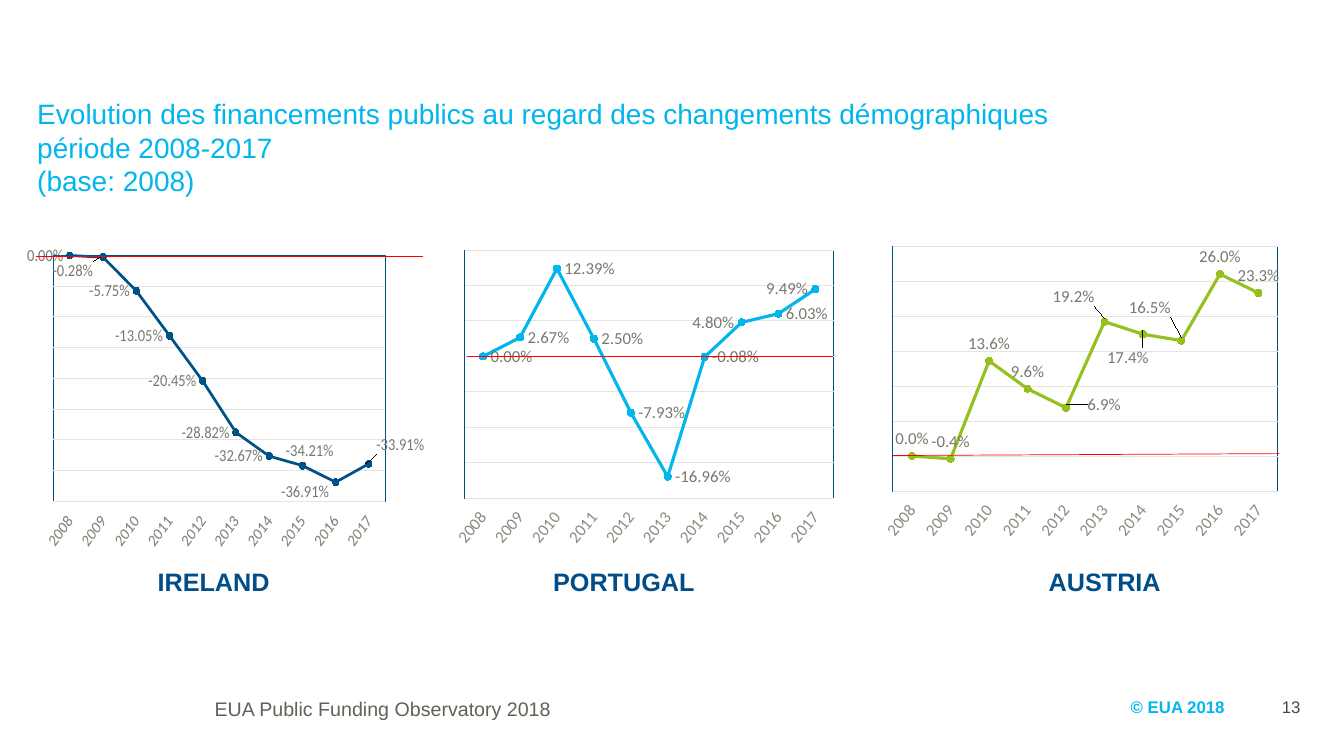
from dataclasses import dataclass

from lxml import etree
from pptx import Presentation
from pptx.chart.data import CategoryChartData
from pptx.dml.color import RGBColor
from pptx.enum.chart import XL_CHART_TYPE as ChartType
from pptx.enum.chart import XL_LABEL_POSITION as LabelPosition
from pptx.enum.chart import XL_MARKER_STYLE as MarkerStyle
from pptx.enum.chart import XL_TICK_LABEL_POSITION as TickLabelPosition
from pptx.enum.chart import XL_TICK_MARK as TickMark
from pptx.enum.shapes import MSO_CONNECTOR as Connector
from pptx.enum.text import MSO_ANCHOR as Anchor
from pptx.enum.text import PP_ALIGN as Align
from pptx.oxml import parse_xml
from pptx.oxml.ns import nsdecls, qn
from pptx.util import Pt


@dataclass(frozen=True)
class Theme:
    cyan: str = "00B6ED"
    navy: str = "005186"
    green: str = "95C11F"
    country: str = "004D88"
    red: str = "FF0000"
    grid: str = "E5E4E2"
    axis_text: str = "8C8B80"
    label_text: str = "7A786E"
    dark: str = "494842"
    footer: str = "645F57"
    text_font: str = "Arial"
    chart_font: str = "Calibri"
    title_size: int = 20
    country_size: int = 18
    footer_size: int = 14
    small_size: int = 12
    chart_size: int = 10


theme = Theme()


def set_font(font, size, color, name=theme.text_font, bold=False):
    font.name, font.size, font.bold = name, Pt(size), bold
    font.color.rgb = RGBColor.from_string(color)


def add_text(box, text, size, color, bold=False, align=Align.LEFT, anchor=Anchor.TOP):
    left, top, width, height = box
    frame = slide.shapes.add_textbox(Pt(left), Pt(top), Pt(width), Pt(height)).text_frame
    frame.word_wrap = True
    frame.vertical_anchor = anchor
    paragraph = frame.paragraphs[0]
    paragraph.text = text
    paragraph.alignment = align
    set_font(paragraph.font, size, color, bold=bold)
    return paragraph


presentation = Presentation()
presentation.slide_width, presentation.slide_height = Pt(960), Pt(540)
slide = presentation.slides.add_slide(presentation.slide_layouts[5])

# Title
title = slide.shapes.title
title.left, title.top, title.width, title.height = Pt(19.4), Pt(65.5), Pt(788), Pt(80)
title.text_frame.text = (
    "Evolution des financements publics au regard des changements démographiques\n"
    "période 2008-2017\n(base: 2008)"
)
title.text_frame.vertical_anchor = Anchor.TOP
title.text_frame.word_wrap = True
for paragraph in title.text_frame.paragraphs:
    paragraph.alignment = Align.LEFT
    paragraph.space_before = Pt(0)
    set_font(paragraph.font, theme.title_size, theme.cyan)

# Countries: boxes in points, plot areas and label shifts as fractions of the chart
LEFT, RIGHT, ABOVE = LabelPosition.LEFT, LabelPosition.RIGHT, LabelPosition.ABOVE
countries = [
    dict(name="IRELAND", color=theme.navy, axis_color=theme.navy,
         box=(19.4, 171.4, 283.7, 226.8), plot=(0.026, 0.049, 0.967, 0.774),
         scale=(-0.4, 0), label_format="0.00%", position=LEFT, caption=(76.3, 152.6),
         values=(0, -0.0028, -0.0575, -0.1305, -0.2045,
                 -0.2882, -0.3267, -0.3421, -0.3691, -0.3391),
         moved={1: (LEFT, -0.01, 0.044), 7: (LEFT, 0.11, -0.047),
                8: (LEFT, 0, 0.031), 9: (LEFT, 0.18, -0.06)}),
    dict(name="PORTUGAL", color=theme.cyan, axis_color=theme.grid,
         box=(319.4, 171.4, 283.7, 226.8), plot=(0.044, 0.032, 0.93, 0.782),
         scale=(-0.2, 0.15), label_format="0.00%", position=RIGHT, caption=(383, 125.3),
         values=(0, 0.0267, 0.1239, 0.025, -0.0793,
                 -0.1696, -0.0008, 0.048, 0.0603, 0.0949),
         moved={7: (LEFT, 0, 0), 9: (LEFT, 0, 0)}),
    dict(name="AUSTRIA", color=theme.green, axis_color=theme.grid,
         box=(630.4, 169.9, 283.7, 218.2), plot=(0.026, 0.027, 0.969, 0.802),
         scale=(-0.05, 0.3), label_format="0.0%", position=ABOVE, caption=(685.4, 207.4),
         values=(0, -0.004, 0.136, 0.096, 0.069, 0.192, 0.174, 0.165, 0.26, 0.233),
         moved={4: (ABOVE, 0.096, 0.046), 5: (ABOVE, -0.078, -0.026),
                6: (ABOVE, -0.038, 0.134), 7: (ABOVE, -0.08, -0.052)}),
]

for country in countries:
    color = RGBColor.from_string(country["color"])
    data = CategoryChartData(number_format=country["label_format"])
    data.categories = [str(year) for year in range(2008, 2018)]
    data.add_series("Series 1", country["values"])
    box = [Pt(length) for length in country["box"]]
    chart = slide.shapes.add_chart(ChartType.LINE_MARKERS, *box, data).chart
    chart.has_legend = chart.has_title = False
    set_font(chart.font, theme.chart_size, theme.dark, theme.chart_font)

    # Axes
    years, funding = chart.category_axis, chart.value_axis
    years.tick_label_position = TickLabelPosition.LOW
    years.major_tick_mark = years.minor_tick_mark = TickMark.NONE
    years.format.line.width = Pt(0.75)
    years.format.line.color.rgb = RGBColor.from_string(country["axis_color"])
    set_font(years.tick_labels.font, theme.small_size, theme.axis_text, theme.chart_font)
    years._element.xpath("c:txPr/a:bodyPr")[0].set("rot", "-3000000")
    funding.visible = False
    funding.minimum_scale, funding.maximum_scale = country["scale"]
    funding.major_unit = 0.05
    funding.has_major_gridlines = True
    funding.major_gridlines.format.line.width = Pt(0.75)
    funding.major_gridlines.format.line.color.rgb = RGBColor.from_string(theme.grid)

    # Line and markers
    chart.plots[0].vary_by_categories = False
    series = chart.plots[0].series[0]
    series.smooth = False
    series.format.line.width = Pt(2.25)
    series.format.line.color.rgb = color
    series.marker.style, series.marker.size = MarkerStyle.CIRCLE, 5
    series.marker.format.fill.solid()
    series.marker.format.fill.fore_color.rgb = color
    series.marker.format.line.color.rgb = color

    # Data labels, some of them moved away from the line
    labels = series.data_labels
    labels.show_value = True
    labels.number_format, labels.number_format_is_linked = country["label_format"], False
    labels.position = country["position"]
    set_font(labels.font, theme.small_size, theme.label_text, theme.chart_font)
    for index, (position, shift_x, shift_y) in country["moved"].items():
        label = series.points[index].data_label
        set_font(label.font, theme.small_size, theme.label_text, theme.chart_font)
        label.position = position
        label_xml = labels._element.xpath(f"c:dLbl[c:idx/@val='{index}']")[0]
        label_xml.insert(1, parse_xml(
            f'<c:layout {nsdecls("c")}><c:manualLayout><c:x val="{shift_x}"/>'
            f'<c:y val="{shift_y}"/></c:manualLayout></c:layout>'))
    # No leader lines
    labels._element.append(parse_xml(
        f'<c:extLst {nsdecls("c")}><c:ext uri="{{CE6537A1-D6FC-4f65-9D91-7224C49458BB}}" '
        'xmlns:c15="http://schemas.microsoft.com/office/drawing/2012/chart">'
        '<c15:showLeaderLines val="0"/></c:ext></c:extLst>'))

    # Fixed plot area with a frame
    plot_area = chart._chartSpace.chart.plotArea
    for layout in plot_area.findall(qn("c:layout")):
        plot_area.remove(layout)
    x, y, width, height = country["plot"]
    plot_area.insert(0, parse_xml(
        f'<c:layout {nsdecls("c")}><c:manualLayout><c:layoutTarget val="inner"/>'
        f'<c:xMode val="edge"/><c:yMode val="edge"/><c:x val="{x}"/><c:y val="{y}"/>'
        f'<c:w val="{width}"/><c:h val="{height}"/></c:manualLayout></c:layout>'))
    plot_area.append(parse_xml(
        f'<c:spPr {nsdecls("c", "a")}><a:noFill/><a:ln w="9525"><a:solidFill>'
        f'<a:srgbClr val="{theme.navy}"/></a:solidFill></a:ln></c:spPr>'))

    caption_left, caption_width = country["caption"]
    add_text((caption_left, 401, caption_width, 29), country["name"],
             theme.country_size, theme.country, bold=True, align=Align.CENTER)

# Red zero lines
for start_x, start_y, end_x, end_y in [
    (333.4, 254.6, 594.7, 254.6), (25.9, 182.9, 302.4, 182.9), (637.9, 325.4, 913.7, 324),
]:
    line = slide.shapes.add_connector(
        Connector.STRAIGHT, Pt(start_x), Pt(start_y), Pt(end_x), Pt(end_y))
    line.line.width = Pt(0.5)
    line.line.color.rgb = RGBColor.from_string(theme.red)
    etree.SubElement(line._element.spPr, qn("a:effectLst"))

# Footer
source = add_text((146.2, 496, 291.6, 29), "EUA Public Funding Observatory 2018",
                  theme.footer_size, theme.footer)
source.line_spacing = 0.9
add_text((800.6, 490.3, 90, 29), "© EUA 2018", theme.small_size, theme.cyan,
         bold=True, anchor=Anchor.MIDDLE)
add_text((892.8, 490.3, 43.2, 29), "13", theme.small_size, theme.dark,
         align=Align.RIGHT, anchor=Anchor.MIDDLE)

presentation.save("out.pptx")
